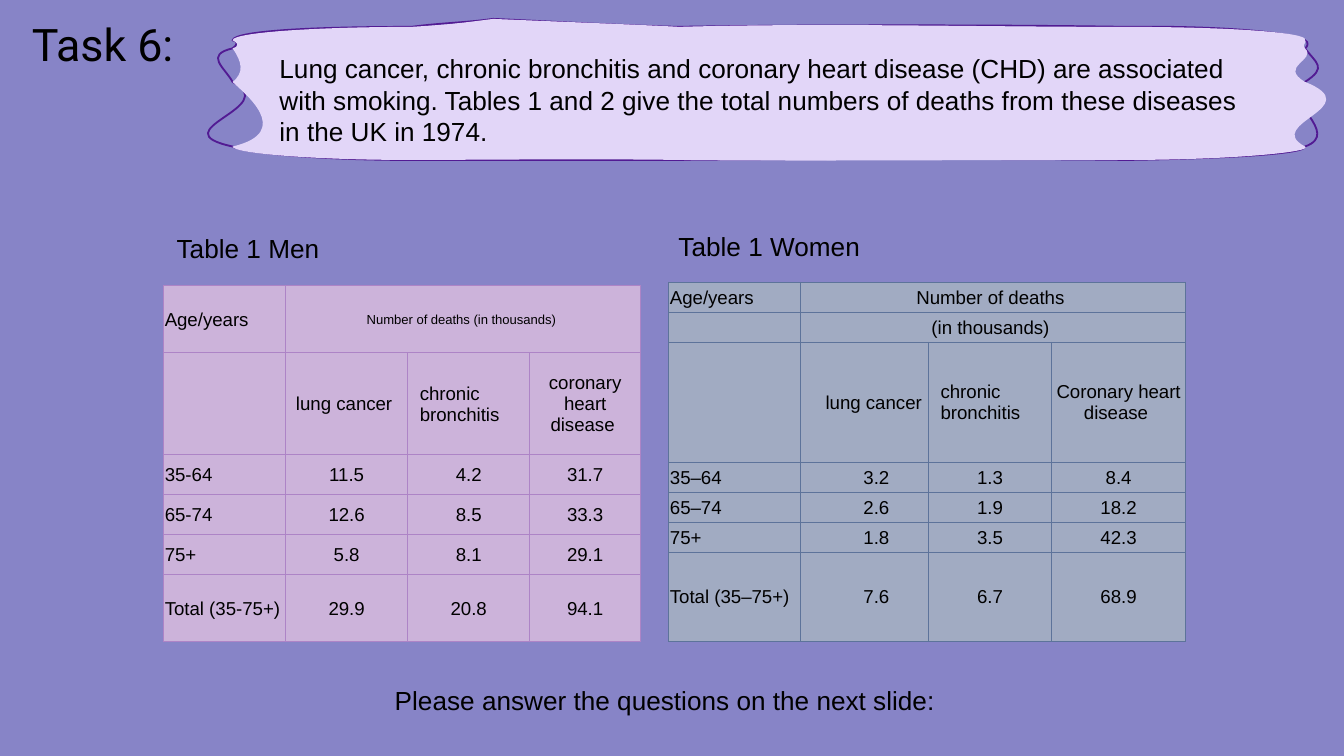
from lxml import etree
from pptx import Presentation
from pptx.dml.color import RGBColor
from pptx.enum.text import MSO_ANCHOR, PP_ALIGN
from pptx.oxml.ns import qn
from pptx.util import Pt

LEFT, CENTER = PP_ALIGN.LEFT, PP_ALIGN.CENTER
MIDDLE = MSO_ANCHOR.MIDDLE

COLORS = {
    "background": "8784C7", "text": "000000",
    "banner": "E2D6F8", "banner_line": "521B93",
    "men": "CCB3DA", "men_border": "AD84C6",
    "women": "A1ABC2", "women_border": "5D739A",
}

INTRO = ("Lung cancer, chronic bronchitis and coronary heart disease (CHD) are "
         "associated with smoking. Tables 1 and 2 give the total numbers of deaths "
         "from these diseases in the UK in 1974.")

# text, (left, top, width, height), format
TEXTS = [
    ("Task 6:", (10, 5, 676.8, 37.4),
     {"size": 24, "font": "Roboto", "spacing": 0.9, "top_inset": 7.2}),
    (INTRO, (142.6, 24.7, 540.7, 74.9), {}),
    ("Table 1 Men", (87.6, 121, 96.5, 41), {"wrap": False}),
    ("Table 1 Women", (356.4, 119.8, 118.1, 41), {"wrap": False}),
    ("Please answer the questions on the next slide:",
     (204.4, 362.9, 319.7, 24.5), {"wrap": False}),
]

# merged_rows: header rows whose last three cells are one
# left_insets: cells, by (row, column), set flush left at that inset
TABLES = [
    {
        "name": "men", "place": (87.6, 153),
        "columns": [65.4, 65.4, 65.4, 59.4],
        "heights": [36, 54.6, 21.4, 21.4, 21.4, 36],
        "merged_rows": [0], "sizes": {(0, 1): 7}, "left_insets": {(1, 2): 6.5},
        "rows": [
            ["Age/years", "Number of deaths (in thousands) ", "", ""],
            ["", "lung cancer ", "chronic bronchitis", "coronary heart disease "],
            ["35-64", "11.5", "4.2", "31.7"],
            ["65-74", "12.6", "8.5", "33.3"],
            ["75+", "5.8", "8.1", "29.1"],
            ["Total (35-75+)", "29.9", "20.8", "94.1"],
        ],
    },
    {
        "name": "women", "place": (358.2, 151.2),
        "columns": [70.6, 68.6, 66, 71.7],
        "heights": [16.1, 16.1, 64.2, 16.1, 16.1, 16.1, 47.7],
        "merged_rows": [0, 1], "sizes": {},
        "left_insets": {(2, 1): 13.5, (2, 2): 6.5,
                        **{(row, 1): 33.8 for row in range(3, 7)}},
        "rows": [
            ["Age/years", "Number of deaths ", "", ""],
            ["", "(in thousands) ", "", ""],
            ["", "lung cancer", "chronic bronchitis", "Coronary heart disease "],
            ["35–64", "3.2", "1.3", "8.4"],
            ["65–74", "2.6", "1.9", "18.2"],
            ["75+", "1.8", "3.5", "42.3"],
            ["Total (35–75+)", "7.6", "6.7", "68.9"],
        ],
    },
]

BANNER_LEFT, BANNER_TOP, BANNER_RIGHT, BANNER_BOTTOM = 124.6, 14.4, 699.1, 85.7
# The banner's fill and its loose outline meet at these points.
BANNER_ANCHORS = [
    (124.6, 21.6), (220.3, 14.4), (264.2, 10.1), (363.6, 14.4), (603.4, 14.4),
    (699.1, 21.6), (699.1, 25.9), (699.1, 43.9), (699.1, 78.5), (603.4, 85.7),
    (363.6, 85.7), (220.3, 85.7), (124.6, 78.5), (124.6, 43.9), (124.6, 25.9),
]
# Two Bézier control points (x, y, x, y) for each stretch between anchors
OUTLINE_CONTROLS = [
    (126, 16.6, 166.3, 14.4), (236.9, 12.2, 249.1, 12.2), (294.5, 11.5, 334.8, 13.7),
    (393.8, 13.7, 520.6, 13), (653, 13.7, 692.6, 17.3), (701.3, 22.3, 700.6, 25.2),
    (704.9, 33.8, 711.4, 36), (685.4, 54, 719.3, 71.3), (699.8, 82.8, 650.2, 85),
    (560.2, 85, 425.5, 85), (309.6, 85.7, 245.5, 85.7), (167, 85.7, 128.9, 81.4),
    (84.2, 69.8, 151.9, 57.6), (120.2, 36, 109.4, 29.5), (126.7, 24.5, 128.2, 22.3),
]
FILL_CONTROLS = [
    (124.6, 17.3, 170.6, 14.4), (242.6, 13, 247.7, 12.2), (280.1, 10.8, 355, 13.7),
    (439.2, 12.2, 521.3, 14.4), (657.4, 14.4, 702, 17.3), (700.6, 22.3, 697, 24.5),
    (705.6, 32.4, 684.7, 35.3), (733.7, 57.6, 676.1, 66.2), (704.2, 81.4, 659.5, 85.7),
    (491, 85.7, 437.8, 86.4), (316.8, 85, 247.7, 85.7), (166.3, 85.7, 124.6, 82.1),
    (158.4, 70.6, 129.6, 49), (131, 38.9, 129.6, 33.1), (129.6, 24.5, 126, 22.3),
]


def color(name):
    return RGBColor.from_string(COLORS[name])


def write(frame, text, size=14, font="Arial", align=LEFT, spacing=None):
    paragraph = frame.paragraphs[0]
    paragraph.alignment = align
    paragraph.line_spacing = spacing
    if not text:  # keeps an empty cell from growing to the default size
        etree.SubElement(paragraph._p, qn("a:endParaRPr"), sz=str(size * 100))
        return
    run = paragraph.add_run()
    run.text = text
    run.font.size = Pt(size)
    run.font.name = font
    run.font.color.rgb = color("text")


def add_text(slide, text, place, wrap=True, top_inset=3.6, **text_format):
    frame = slide.shapes.add_textbox(*map(Pt, place)).text_frame
    frame.word_wrap = wrap
    frame.margin_top = Pt(top_inset)
    write(frame, text, **text_format)


def add_curve(outlines, shape, controls, **paint):
    """Add a closed curve through the banner's anchors to its list of outlines."""
    curve = etree.SubElement(outlines, qn("a:path"), w=str(shape.width),
                             h=str(shape.height), **paint)

    def add_step(tag, *points):
        step = etree.SubElement(curve, qn(tag))
        for x, y in points:
            etree.SubElement(step, qn("a:pt"), x=str(Pt(x - BANNER_LEFT)),
                             y=str(Pt(y - BANNER_TOP)))

    add_step("a:moveTo", BANNER_ANCHORS[0])
    for control, end in zip(controls, BANNER_ANCHORS[1:] + BANNER_ANCHORS[:1]):
        add_step("a:cubicBezTo", control[:2], control[2:], end)
    add_step("a:close")


def add_banner(slide):
    builder = slide.shapes.build_freeform(Pt(BANNER_LEFT), Pt(BANNER_TOP))
    builder.add_line_segments([(Pt(BANNER_RIGHT), Pt(BANNER_TOP)),
                               (Pt(BANNER_RIGHT), Pt(BANNER_BOTTOM))])
    shape = builder.convert_to_shape()
    shape.shadow.inherit = False
    shape.fill.solid()
    shape.fill.fore_color.rgb = color("banner")
    shape.line.color.rgb = color("banner_line")
    shape.line.width = Pt(1)

    outlines = shape._element.spPr.find(".//" + qn("a:pathLst"))
    for straight in list(outlines):
        outlines.remove(straight)
    add_curve(outlines, shape, OUTLINE_CONTROLS, fill="none")
    add_curve(outlines, shape, FILL_CONTROLS, stroke="0")


def add_borders(cell, border):
    properties = cell._tc.get_or_add_tcPr()
    for side in ("lnL", "lnR", "lnT", "lnB"):
        line = etree.SubElement(properties, qn("a:" + side), w=str(Pt(0.5)))
        fill = etree.SubElement(line, qn("a:solidFill"))
        etree.SubElement(fill, qn("a:srgbClr"), val=COLORS[border])


def add_deaths_table(slide, data):
    rows, columns, heights = data["rows"], data["columns"], data["heights"]
    size = (sum(columns), sum(heights))
    table = slide.shapes.add_table(len(rows), len(columns),
                                   *map(Pt, data["place"] + size)).table
    for column, width in zip(table.columns, columns):
        column.width = Pt(width)
    for row, height in zip(table.rows, heights):
        row.height = Pt(height)
    for r, texts in enumerate(rows):
        for c, text in enumerate(texts):
            cell = table.cell(r, c)
            inset = data["left_insets"].get((r, c))
            cell.margin_left = Pt(inset or 0.7)
            cell.margin_right = cell.margin_top = Pt(0.7)
            cell.margin_bottom = Pt(0)
            cell.vertical_anchor = MIDDLE
            add_borders(cell, data["name"] + "_border")
            cell.fill.solid()
            cell.fill.fore_color.rgb = color(data["name"])
            write(cell.text_frame, text, size=data["sizes"].get((r, c), 10),
                  align=LEFT if inset or c == 0 else CENTER)
    for r in data["merged_rows"]:
        table.cell(r, 1).merge(table.cell(r, len(columns) - 1))


def main():
    presentation = Presentation()
    presentation.slide_width, presentation.slide_height = Pt(720), Pt(405)
    slide = presentation.slides.add_slide(presentation.slide_layouts[6])
    slide.background.fill.solid()
    slide.background.fill.fore_color.rgb = color("background")

    add_banner(slide)
    for text, place, text_format in TEXTS:
        add_text(slide, text, place, **text_format)
    for data in TABLES:
        add_deaths_table(slide, data)
    presentation.save("out.pptx")


if __name__ == "__main__":
    main()
